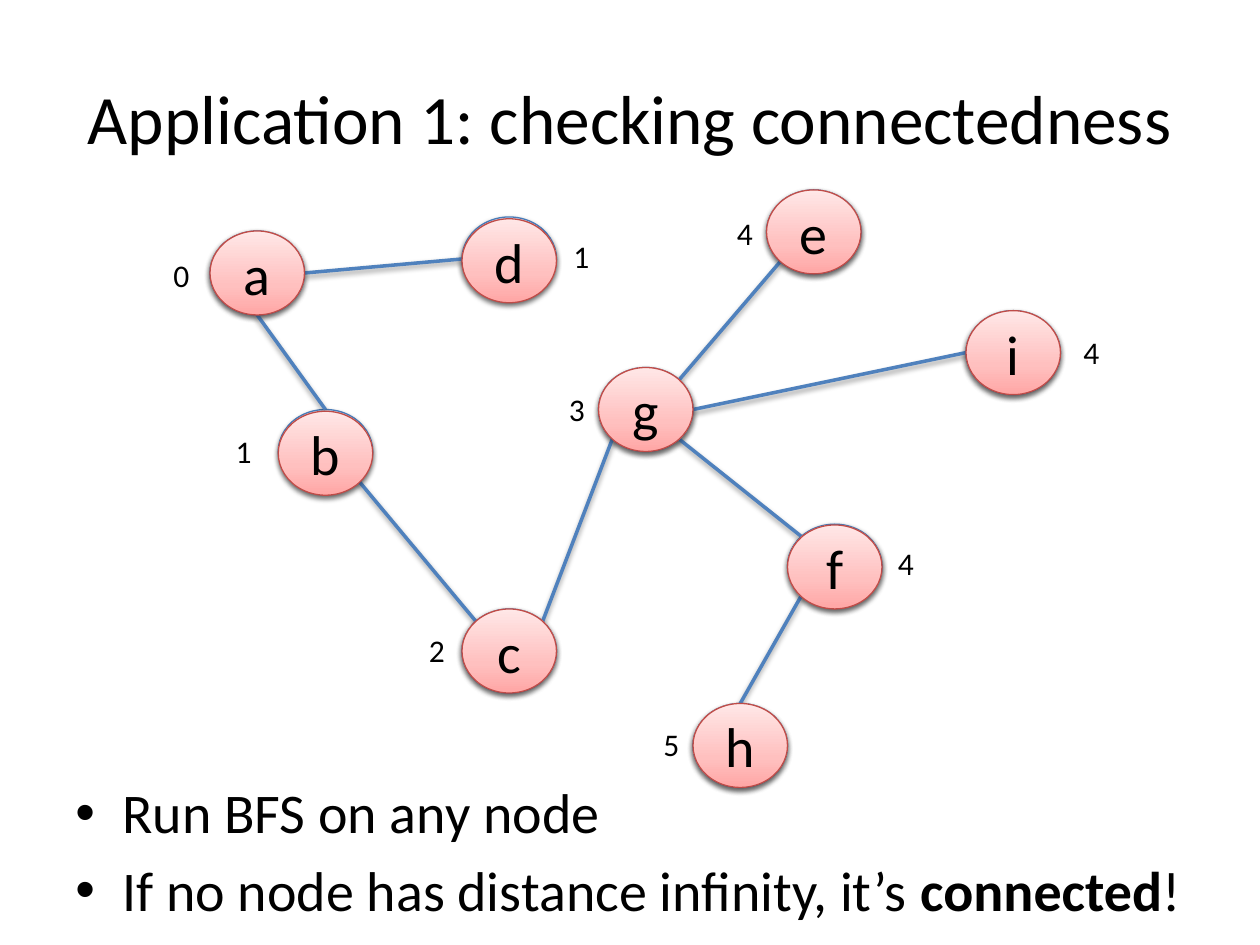
from pptx import Presentation
from pptx.dml.color import RGBColor
from pptx.enum.shapes import MSO_CONNECTOR as Link, MSO_SHAPE as Kind
from pptx.enum.text import MSO_ANCHOR as Anchor, MSO_AUTO_SIZE as Fit, PP_ALIGN as Align
from pptx.oxml import parse_xml as to_xml
from pptx.util import Pt
from math import cos, radians, sin

NS = 'xmlns:a="http://schemas.openxmlformats.org/drawingml/2006/main"'
FONT = "Calibri"
WIDE, HIGH = 54, 48
BLUE = ("A4C4FF", "BFD4FF", "E6EEFF", "4B7EBC")
RED = ("FFA6A5", "FFC0BF", "FFE7E7", "BF4C48")
E, SE, S, SW, W, NW, N, NE = range(0, 360, 45)

NODES = {
    "a": (120, 132), "b": (159, 234), "d": (264, 124), "c": (264, 348),
    "g": (342, 210), "e": (438, 108.5), "f": (450, 299.5),
    "i": (552, 177.5), "h": (396, 402),
}
LOW = {"b": 1, "d": 1, "f": 0.5}
EDGES = [
    ("a", S, "b", N), ("a", E, "d", W), ("b", SE, "c", NW),
    ("c", NE, "g", SW), ("g", NE, "e", SW), ("g", SE, "f", NW),
    ("g", E, "i", W), ("f", SW, "h", N),
]
MARKS = [
    ("0", 92, 142.5), ("1", 127.5, 243.5), ("1", 320.5, 132),
    ("2", 238, 357), ("3", 318, 219.5), ("4", 414, 119),
    ("4", 612, 187), ("4", 506, 307.5), ("5", 372, 411),
]


def tint(code):
    return RGBColor.from_string(code)


def style(para, size, align=None):
    para.alignment = align
    for run in para.runs:
        run.font.name = FONT
        run.font.size = Pt(size)
        run.font.color.rgb = tint("000000")


def shade(shape):
    shape._element.spPr.append(to_xml(
        f'<a:effectLst {NS}><a:outerShdw blurRad="40000" dist="20000" '
        'dir="5400000" rotWithShape="0"><a:srgbClr val="000000">'
        '<a:alpha val="38000"/></a:srgbClr></a:outerShdw></a:effectLst>'))


def blend(shape, codes):
    stops = "".join(
        f'<a:gs pos="{pos}"><a:srgbClr val="{code}"/></a:gs>'
        for pos, code in zip((0, 35000, 100000), codes))
    shape._element.spPr.insert(2, to_xml(
        f'<a:gradFill {NS} rotWithShape="1"><a:gsLst>{stops}</a:gsLst>'
        '<a:lin ang="16200000" scaled="0"/></a:gradFill>'))


def add_node(slide, name, left, top, look):
    node = slide.shapes.add_shape(Kind.OVAL, Pt(left), Pt(top), Pt(WIDE), Pt(HIGH))
    blend(node, look[:3])
    node.line.color.rgb = tint(look[3])
    node.line.width = Pt(0.75)
    shade(node)
    frame = node.text_frame
    frame.text = name
    frame.vertical_anchor = Anchor.MIDDLE
    style(frame.paragraphs[0], 32, Align.CENTER)


def rim(name, angle):
    left, top = NODES[name]
    turn = radians(angle)
    return (Pt(left + WIDE / 2 * (1 + cos(turn))),
            Pt(top + HIGH / 2 * (1 + sin(turn))))


def add_edge(slide, start, out, end, into):
    edge = slide.shapes.add_connector(
        Link.STRAIGHT, *rim(start, out), *rim(end, into))
    edge.line.color.rgb = tint("4F81BD")
    edge.line.width = Pt(2)
    shade(edge)


def add_mark(slide, text, left, top):
    frame = slide.shapes.add_textbox(Pt(left), Pt(top), Pt(24), Pt(29)).text_frame
    frame.word_wrap = False
    frame.auto_size = Fit.SHAPE_TO_FIT_TEXT
    frame.text = text
    style(frame.paragraphs[0], 18)


def add_title(slide, text):
    title = slide.shapes.title
    title.left, title.top, title.width, title.height = Pt(36), Pt(21.6), Pt(648), Pt(90)
    frame = title.text_frame
    frame.text = text
    frame.vertical_anchor = Anchor.MIDDLE
    style(frame.paragraphs[0], 39.6, Align.CENTER)


def add_list(slide, items):
    frame = slide.shapes.add_textbox(Pt(36), Pt(441), Pt(648), Pt(93)).text_frame
    frame.word_wrap = True
    for index, parts in enumerate(items):
        para = frame.add_paragraph() if index else frame.paragraphs[0]
        for text, bold in parts:
            run = para.add_run()
            run.text = text
            run.font.bold = bold
        style(para, 32)
        para.space_after = Pt(5.6)
        props = para._p.get_or_add_pPr()
        props.set("marL", str(Pt(27)))
        props.set("indent", str(Pt(-27)))
        props.append(to_xml(f'<a:buFont {NS} typeface="Arial"/>'))
        props.append(to_xml(f'<a:buChar {NS} char="•"/>'))


def main():
    deck = Presentation()
    deck.slide_width, deck.slide_height = Pt(720), Pt(540)
    slide = deck.slides.add_slide(deck.slide_layouts[5])
    add_title(slide, "Application 1: checking connectedness")
    add_list(slide, [
        [("Run BFS on any node", False)],
        [("If no node has distance infinity, it’s ", False),
         ("connected", True), ("!", False)],
    ])
    for name, (left, top) in NODES.items():
        add_node(slide, name, left, top, BLUE)
    for edge in EDGES:
        add_edge(slide, *edge)
    for name, (left, top) in NODES.items():
        add_node(slide, name, left, top + LOW.get(name, 0), RED)
    for mark in MARKS:
        add_mark(slide, *mark)
    deck.save("out.pptx")


if __name__ == "__main__":
    main()
